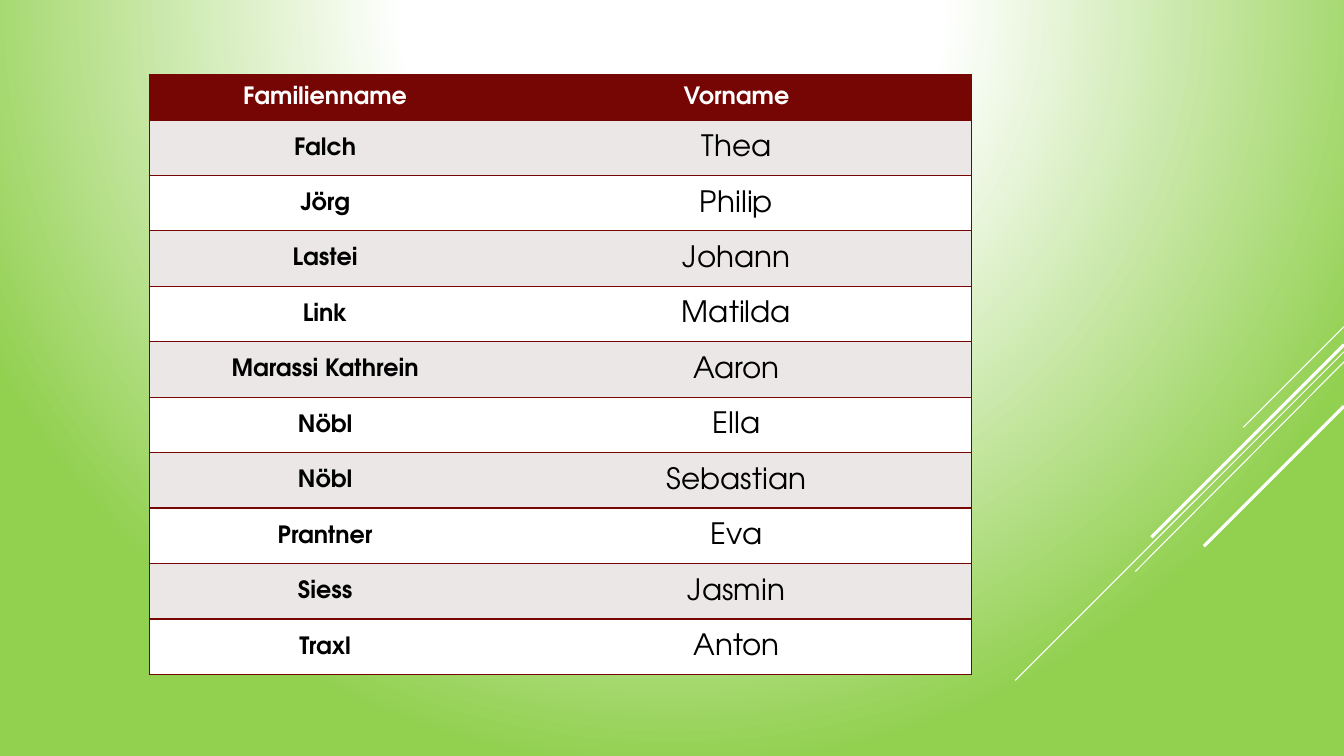
from lxml.etree import SubElement
from pptx import Presentation
from pptx.dml.color import RGBColor
from pptx.enum.shapes import MSO_CONNECTOR
from pptx.enum.text import MSO_ANCHOR, PP_ALIGN
from pptx.oxml import parse_xml
from pptx.oxml.ns import nsdecls, qn
from pptx.util import Inches, Pt

WHITE = RGBColor(0xFF, 0xFF, 0xFF)
BLACK = RGBColor(0x00, 0x00, 0x00)
GREEN = RGBColor(0x92, 0xD0, 0x50)
MAROON = RGBColor(0x76, 0x06, 0x03)
PALE = RGBColor(0xEC, 0xE7, 0xE7)

HEADINGS = ("Familienname", "Vorname")
CHILDREN = [
    ("Falch", "Thea"),
    ("Jörg", "Philip"),
    ("Lastei", "Johann"),
    ("Link", "Matilda"),
    ("Marassi Kathrein", "Aaron"),
    ("Nöbl", "Ella"),
    ("Nöbl", "Sebastian"),
    ("Prantner", "Eva"),
    ("Siess", "Jasmin"),
    ("Traxl", "Anton"),
]
STREAKS = [
    (3.24, 12.33, 4.24, 0.75),
    (3.49, 10.07, 6.75, 0.75),
    (3.59, 11.26, 5.67, 0.75),
    (3.42, 11.42, 5.33, 2.25),
    (4.03, 11.94, 5.42, 2.25),
]


def write_text(frame, text, size=17, bold=True, color=BLACK, font="TeX Gyre Adventor"):
    paragraph = frame.paragraphs[0]
    paragraph.alignment = PP_ALIGN.CENTER
    paragraph.line_spacing = 1.07
    paragraph.space_after = Pt(8)
    run = paragraph.add_run()
    run.text = text
    run.font.name = font
    run.font.size = Pt(size)
    run.font.bold = bold
    run.font.color.rgb = color


class ClassListSlide:
    def __init__(self, slide, border=MAROON, border_width=1):
        self.slide = slide
        self.border = border
        self.border_width = border_width

    def radial_background(self, stops):
        self.slide.background.fill.gradient()
        gradient = self.slide.element.find(".//" + qn("a:gradFill"))
        for part in list(gradient):
            gradient.remove(part)
        stop_list = SubElement(gradient, qn("a:gsLst"))
        for percent, color in stops:
            stop = SubElement(stop_list, qn("a:gs"), pos=str(percent * 1000))
            SubElement(stop, qn("a:srgbClr"), val=str(color))
        circle = SubElement(gradient, qn("a:path"), path="circle")
        SubElement(circle, qn("a:fillToRect"), l="50000", t="-80000", r="50000", b="180000")

    def streak(self, start_y, end_x, end_y, width):
        line = self.slide.shapes.add_connector(
            MSO_CONNECTOR.STRAIGHT,
            Inches(13.33), Inches(start_y), Inches(end_x), Inches(end_y),
        )
        line.line.color.rgb = WHITE
        line.line.width = Pt(width)
        SubElement(line.element.spPr, qn("a:effectLst"))

    def cell_borders(self, cell, visible):
        properties = cell._tc.get_or_add_tcPr()
        for position, side in enumerate("LRTB"):
            paint = (
                f'<a:solidFill><a:srgbClr val="{self.border}"/></a:solidFill>'
                if side in visible else "<a:noFill/>"
            )
            edge = parse_xml(
                f'<a:ln{side} {nsdecls("a")} w="{Pt(self.border_width)}">{paint}</a:ln{side}>'
            )
            properties.insert(position, edge)

    def cell(self, cell, text, fill, visible, **text_format):
        cell.fill.solid()
        cell.fill.fore_color.rgb = fill
        cell.vertical_anchor = MSO_ANCHOR.MIDDLE
        cell.margin_left = cell.margin_right = Inches(0.07)
        cell.margin_top = cell.margin_bottom = 0
        self.cell_borders(cell, visible)
        write_text(cell.text_frame, text, **text_format)

    def name_table(self, left, top, column_widths, header_height, row_height):
        height = header_height + row_height * len(CHILDREN)
        table = self.slide.shapes.add_table(
            len(CHILDREN) + 1, len(HEADINGS),
            Inches(left), Inches(top), Inches(sum(column_widths)), Inches(height),
        ).table
        for column, width in zip(table.columns, column_widths):
            column.width = Inches(width)
        for index, names in enumerate([HEADINGS, *CHILDREN]):
            is_header = index == 0
            table.rows[index].height = Inches(header_height if is_header else row_height)
            fill = MAROON if is_header else PALE if index % 2 else WHITE
            for column, name in enumerate(names):
                is_first_name = column == 1 and not is_header
                self.cell(
                    table.cell(index, column), name, fill,
                    visible="RTB" if column else "LTB",
                    size=21 if is_first_name else 17,
                    bold=not is_first_name,
                    color=WHITE if is_header else BLACK,
                )


def main():
    presentation = Presentation()
    presentation.slide_width = Inches(13.33)
    presentation.slide_height = Inches(7.5)
    class_list = ClassListSlide(presentation.slides.add_slide(presentation.slide_layouts[6]))
    class_list.radial_background([(0, WHITE), (35, WHITE), (100, GREEN)])
    for streak in STREAKS:
        class_list.streak(*streak)
    class_list.name_table(1.48, 0.74, (3.49, 4.67), 0.45, 0.55)
    presentation.save("out.pptx")


if __name__ == "__main__":
    main()
